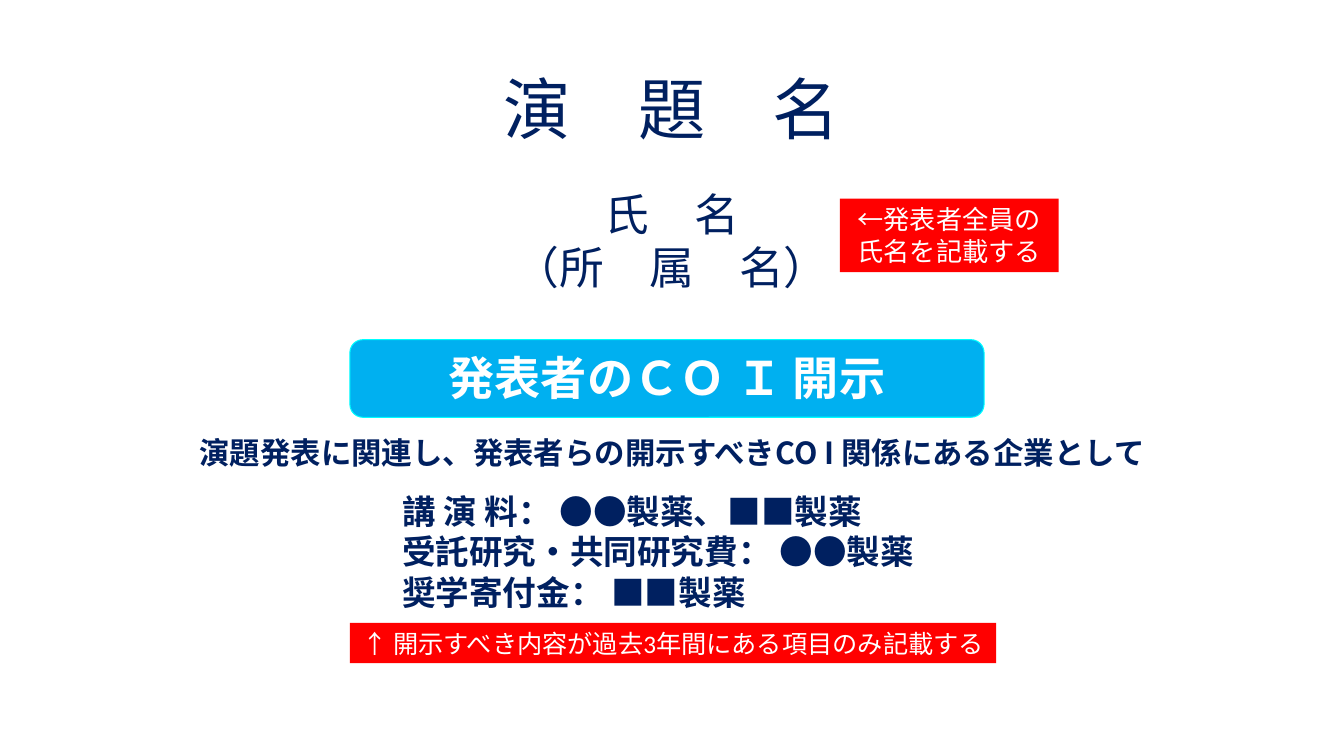
from pptx import Presentation
from pptx.dml.color import RGBColor
from pptx.enum.shapes import MSO_SHAPE as Shape
from pptx.enum.text import MSO_ANCHOR as Anchor, PP_ALIGN as Align
from pptx.util import Inches, Pt

# Content
TITLE = ["演　題　名"]
NAMES = ["氏　名", "（所　属　名）"]
HEAD = ["発表者のＣＯ Ｉ 開示"]
LEAD = ["演題発表に関連し、発表者らの開示すべきCO I 関係にある企業として"]
ITEMS = [
    "講 演 料： ●●製薬、■■製薬",
    "受託研究・共同研究費： ●●製薬",
    "奨学寄付金： ■■製薬",
]
SIDE = ["←発表者全員の\v氏名を記載する"]
NOTE = ["↑ 開示すべき内容が過去3年間にある項目のみ記載する"]

NAVY, WHITE, RED, BLUE, CYAN = "002060", "FFFFFF", "FF0000", "00B0F0", "00FFFF"
CJK = "Noto Sans CJK JP"
WIDE, HIGH = 13.33, 7.5
EDGE = 3.47  # shared left side of the heading and the lower note


def paint(fmt, color):
    fmt.solid()
    fmt.fore_color.rgb = RGBColor.from_string(color)


def write(shape, lines, font, size, color, bold=False, align=Align.CENTER, gap=None):
    frame = shape.text_frame
    frame.word_wrap = True
    frame.text = "\n".join(lines)
    for para in frame.paragraphs:
        para.alignment = align
        para.line_spacing = gap
        para.font.name = font
        para.font.size = Pt(size)
        para.font.bold = bold
        para.font.color.rgb = RGBColor.from_string(color)
    return frame


def label(box, *args, **opts):
    return write(slide.shapes.add_textbox(*map(Inches, box)), *args, **opts)


def block(kind, box, fill, line=None):
    shape = slide.shapes.add_shape(kind, *map(Inches, box))
    shape.shadow.inherit = False
    paint(shape.fill, fill)
    if line:
        paint(shape.line.fill, line)
        shape.line.width = Pt(0.75)
    else:
        shape.line.fill.background()
    return shape


deck = Presentation()
deck.slide_width, deck.slide_height = Inches(WIDE), Inches(HIGH)
slide = deck.slides.add_slide(deck.slide_layouts[6])

# Title and speakers
label((0, 0.62, WIDE, 0.91), TITLE, CJK, 48, NAVY)
label((0, 1.8, WIDE, 1.18), NAMES, CJK, 32, NAVY)

# Disclosure heading
head = block(Shape.ROUNDED_RECTANGLE, (EDGE, 3.37, 6.29, 0.77), BLUE, CYAN)
frame = write(head, HEAD, "Arial", 33, WHITE, bold=True, gap=0.9)
frame.margin_bottom = 0

# Disclosure text
label((0, 4.39, WIDE, 0.85), LEAD, CJK, 21.7, NAVY, bold=True, gap=0.6)
label((3.89, 4.82, 5.87, 1.31), ITEMS, "Arial", 24, NAVY, bold=True, align=Align.LEFT)

# Red guidance notes
for box, lines, size in [
    ((8.33, 1.97, 2.17, 0.73), SIDE, 18.7),
    ((EDGE, 6.18, 6.41, 0.4), NOTE, 18),
]:
    frame = write(block(Shape.RECTANGLE, box, RED), lines, "Calibri", size, WHITE)
    frame.vertical_anchor = Anchor.TOP
    frame.margin_left = frame.margin_right = Inches(0.05)

deck.save("out.pptx")
